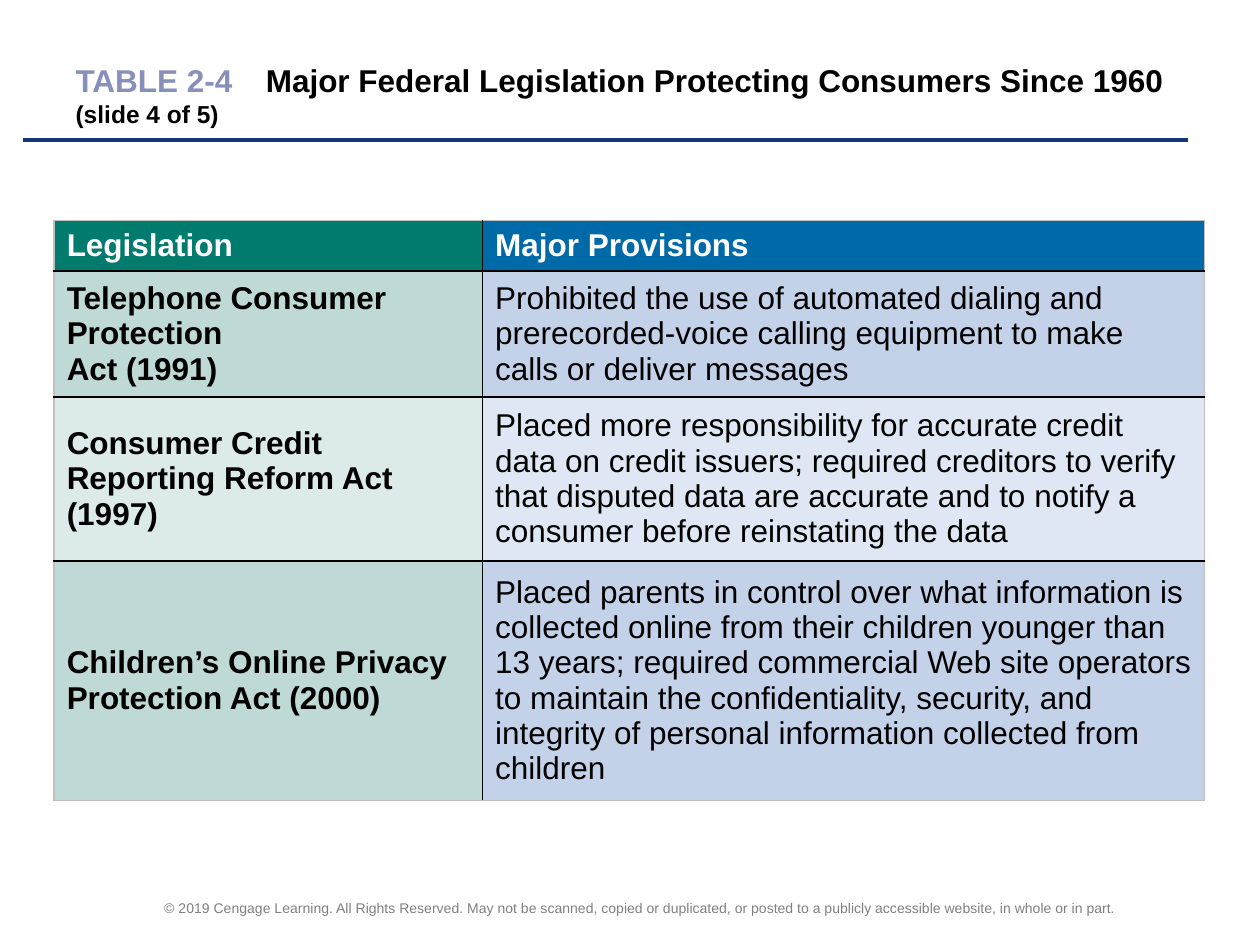
from pptx import Presentation
from pptx.dml.color import RGBColor
from pptx.enum.shapes import MSO_CONNECTOR
from pptx.enum.text import MSO_ANCHOR, MSO_AUTO_SIZE, PP_ALIGN
from pptx.oxml import parse_xml
from pptx.oxml.ns import nsdecls
from pptx.util import Inches, Pt

theme = dict(
    font="Arial", title=18, part=14, body=18, notice=8,
    black="000000", white="FFFFFF", label="888FB8", grey="808080",
    rule="133676", outline="BFBFBF",
    header=("007B6D", "006AA9"),
    bands=(("BFDAD6", "C3D2E9"), ("DCEBE9", "DEE7F3")),
)


def write(paragraph, text, size=theme["body"], color=theme["black"], bold=False, align=PP_ALIGN.LEFT):
    paragraph.alignment = align
    run = paragraph.add_run()
    run.text = text
    run.font.name = theme["font"]
    run.font.size = Pt(size)
    run.font.bold = bold
    run.font.color.rgb = RGBColor.from_string(color)


deck = Presentation()
deck.slide_width, deck.slide_height = Inches(10), Inches(7.5)
width, height = deck.slide_width, deck.slide_height
slide = deck.slides.add_slide(deck.slide_layouts[5])

notice = slide.shapes.add_textbox(
    int(width * 0.075), int(height * 0.944), int(width * 0.867), Inches(0.25)
).text_frame
notice.word_wrap = True
notice.vertical_anchor = MSO_ANCHOR.MIDDLE
write(
    notice.paragraphs[0],
    "© 2019 Cengage Learning. All Rights Reserved. May not be scanned, copied or duplicated, "
    "or posted to a publicly accessible website, in whole or in part.",
    size=theme["notice"], color=theme["grey"], align=PP_ALIGN.CENTER,
)

rule_y = int(height * 0.148)
rule = slide.shapes.add_connector(
    MSO_CONNECTOR.STRAIGHT, int(width * 0.018), rule_y, int(width * 0.943), rule_y
)
rule.line.color.rgb = RGBColor.from_string(theme["rule"])
rule.line.width = Pt(2.25)
rule._element.spPr.append(parse_xml(f"<a:effectLst {nsdecls('a')}/>"))

heading = slide.shapes.title
heading.left, heading.top = int(width * 0.05), int(height * 0.05)
heading.width, heading.height = int(width * 0.9), int(height * 0.1)
heading.text_frame.word_wrap = True
heading.text_frame.auto_size = MSO_AUTO_SIZE.NONE
heading.text_frame.vertical_anchor = MSO_ANCHOR.MIDDLE
heading_line = heading.text_frame.paragraphs[0]
heading_line._p.get_or_add_pPr().append(parse_xml(
    f'<a:tabLst {nsdecls("a")}><a:tab pos="{Inches(1.51)}" algn="l"/></a:tabLst>'
))
write(heading_line, "TABLE 2-4", size=theme["title"], color=theme["label"], bold=True)
write(heading_line, "\tMajor Federal Legislation Protecting Consumers Since 1960",
      size=theme["title"], bold=True)
heading_line.add_line_break()
write(heading_line, "(slide 4 of 5)", size=theme["part"], bold=True)

acts = [
    ("Legislation", "Major Provisions"),
    ("Telephone Consumer Protection\nAct (1991)",
     "Prohibited the use of automated dialing and prerecorded-voice calling equipment "
     "to make calls or deliver messages"),
    ("Consumer Credit Reporting Reform Act (1997)",
     "Placed more responsibility for accurate credit data on credit issuers; required creditors "
     "to verify that disputed data are accurate and to notify a consumer before reinstating the data"),
    ("Children’s Online Privacy Protection Act (2000)",
     "Placed parents in control over what information is collected online from their children "
     "younger than 13 years; required commercial Web site operators to maintain the "
     "confidentiality, security, and integrity of personal information collected from children"),
]
column_widths = (3.4, 5.73)
row_heights = (0.38, 0.94, 1.22, 1.78)
legislation = slide.shapes.add_table(
    len(acts), len(column_widths), Inches(0.43), Inches(1.75),
    Inches(sum(column_widths)), Inches(sum(row_heights)),
).table
for column, inches in zip(legislation.columns, column_widths):
    column.width = Inches(inches)

for r, act in enumerate(acts):
    legislation.rows[r].height = Inches(row_heights[r])
    fills = theme["header"] if r == 0 else theme["bands"][(r - 1) % 2]
    for c, wording in enumerate(act):
        cell = legislation.cell(r, c)
        cell.fill.solid()
        cell.fill.fore_color.rgb = RGBColor.from_string(fills[c])
        cell.vertical_anchor = MSO_ANCHOR.MIDDLE
        for i, line in enumerate(wording.split("\n")):
            paragraph = cell.text_frame.add_paragraph() if i else cell.text_frame.paragraphs[0]
            write(paragraph, line, bold=r == 0 or c == 0,
                  color=theme["white"] if r == 0 else theme["black"])
        outer_sides = {"L": c == 0, "R": c == len(act) - 1, "T": r == 0, "B": r == len(acts) - 1}
        for i, (side, outer) in enumerate(outer_sides.items()):
            color = theme["outline"] if outer else theme["black"]
            cell._tc.get_or_add_tcPr().insert(i, parse_xml(
                f'<a:ln{side} {nsdecls("a")} w="{Pt(1)}"><a:solidFill>'
                f'<a:srgbClr val="{color}"/></a:solidFill></a:ln{side}>'
            ))

deck.save("out.pptx")
